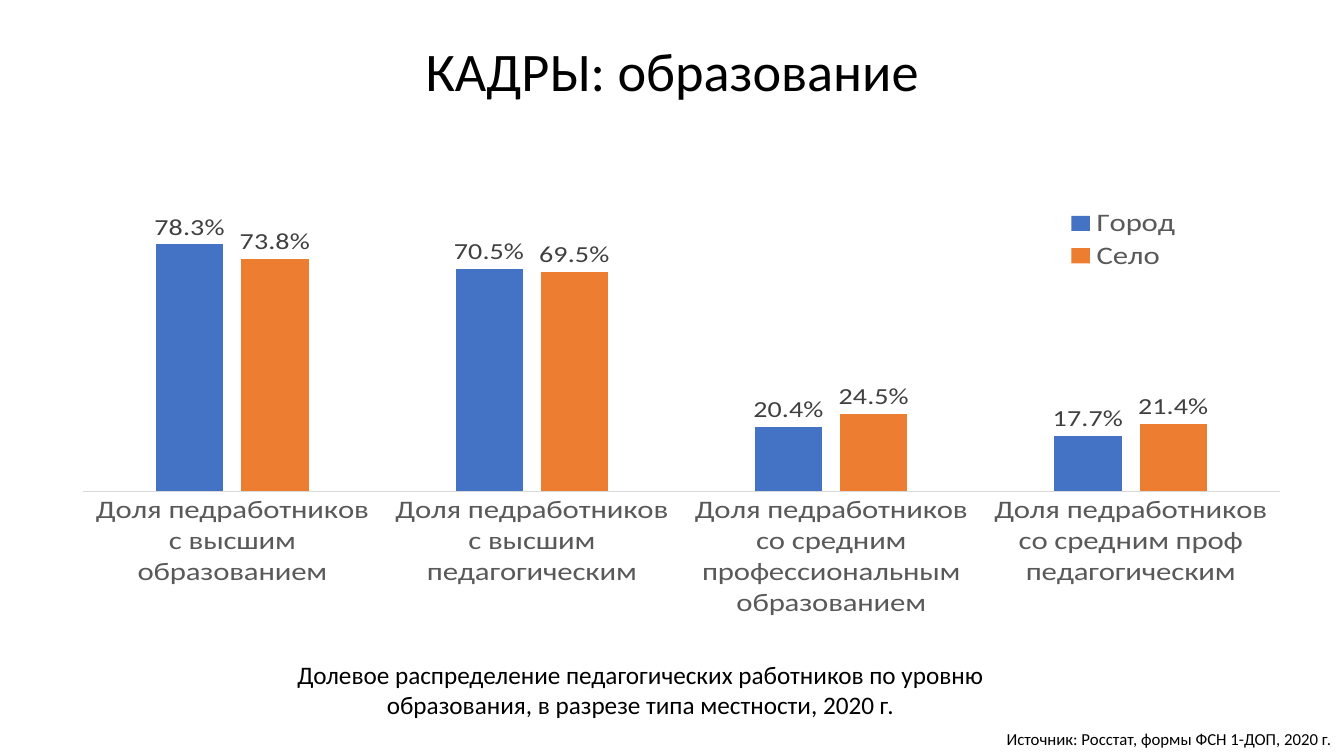
from lxml import etree
from pptx import Presentation, util as u
from pptx.chart.data import CategoryChartData
from pptx.dml.color import RGBColor
from pptx.enum import chart as ch, text
from pptx.oxml import ns

BLACK = RGBColor(0, 0, 0)
LABEL_GREY = RGBColor(0x40, 0x40, 0x40)
AXIS_GREY = RGBColor(0x59, 0x59, 0x59)
LINE_GREY = RGBColor(0xD9, 0xD9, 0xD9)
BLUE = RGBColor(0x44, 0x72, 0xC4)
ORANGE = RGBColor(0xED, 0x7D, 0x31)


def style_font(font, size, color, name):
    font.size = u.Pt(size)
    font.color.rgb = color
    font.name = name


def write_text(frame, words, size, font="Calibri", color=BLACK,
               align=text.PP_ALIGN.CENTER, spacing=None, before=None):
    frame.word_wrap = True
    paragraph = frame.paragraphs[0]
    paragraph.alignment = align
    paragraph.line_spacing = spacing
    paragraph.space_before = before
    run = paragraph.add_run()
    run.text = words
    style_font(run.font, size, color, font)


def place(element, before, **edges):
    layout = etree.Element(ns.qn("c:layout"))
    manual = etree.SubElement(layout, ns.qn("c:manualLayout"))
    for tag, value in edges.items():
        etree.SubElement(manual, ns.qn(f"c:{tag}")).set("val", str(value))
    for old in element.findall(ns.qn("c:layout")):
        element.remove(old)
    element.find(ns.qn(before)).addprevious(layout)


class SlideBuilder:
    font = "Calibri"

    def __init__(self, deck):
        self.slide = deck.slides.add_slide(deck.slide_layouts[6])

    def text_box(self, words, left, top, width, height, **style):
        box = self.slide.shapes.add_textbox(*map(u.Cm, (left, top, width, height)))
        write_text(box.text_frame, words, font=self.font, **style)

    def column_chart(self, categories, groups, left, top, width, height):
        data = CategoryChartData(number_format="0.0%")
        data.categories = categories
        for name, (values, _) in groups.items():
            data.add_series(name, values)
        chart = self.slide.shapes.add_chart(
            ch.XL_CHART_TYPE.COLUMN_CLUSTERED,
            *map(u.Cm, (left, top, width, height)), data).chart
        chart.has_title = False
        style_font(chart.font, 14, BLACK, self.font)
        self.style_axes(chart)
        self.style_columns(chart.plots[0], [color for _, color in groups.values()])
        self.add_legend(chart)
        place(chart.plots[0]._element.getparent(), "c:barChart",
              layoutTarget="inner", xMode="edge", yMode="edge",
              x=0.013, y=0.043, w=0.975, h=0.813)

    def style_axes(self, chart):
        level = chart.category_axis
        level.major_tick_mark = ch.XL_TICK_MARK.NONE
        level.format.line.color.rgb = LINE_GREY
        level.format.line.width = u.Pt(0.75)
        style_font(level.tick_labels.font, 22, AXIS_GREY, self.font)
        share = chart.value_axis
        share.minimum_scale, share.maximum_scale = 0, 0.9
        share.has_major_gridlines = False
        share.visible = False

    def style_columns(self, plot, colors):
        plot.gap_width, plot.overlap = 219, -27
        plot.vary_by_categories = False
        for series, color in zip(plot.series, colors):
            series.format.fill.solid()
            series.format.fill.fore_color.rgb = color
            labels = series.data_labels
            labels.show_value = True
            labels.position = ch.XL_LABEL_POSITION.OUTSIDE_END
            labels.number_format = "0.0%"
            labels.number_format_is_linked = False
            style_font(labels.font, 20, LABEL_GREY, self.font)

    def add_legend(self, chart):
        chart.has_legend = True
        legend = chart.legend
        legend.position = ch.XL_LEGEND_POSITION.TOP
        legend.include_in_layout = False
        style_font(legend.font, 22, AXIS_GREY, self.font)
        place(legend._element, "c:overlay", xMode="edge", yMode="edge",
              x=0.8, y=0.04, w=0.12, h=0.19)


def main():
    deck = Presentation()
    deck.slide_width, deck.slide_height = u.Cm(33.87), u.Cm(19.05)
    page = SlideBuilder(deck)
    page.text_box("КАДРЫ: образование", 2.33, 1.27, 29.21, 2.33,
                  size=38.8, spacing=0.7, before=u.Pt(10))
    page.column_chart(
        ["Доля педработников с высшим образованием",
         "Доля педработников с высшим педагогическим",
         "Доля педработников со средним профессиональным образованием",
         "Доля педработников со средним проф педагогическим"],
        {"Город": ((0.783, 0.705, 0.204, 0.177), BLUE),
         "Село": ((0.738, 0.695, 0.245, 0.214), ORANGE)},
        1.68, 4.85, 30.96, 10.74)
    page.text_box("Источник: Росстат, формы ФСН 1-ДОП, 2020 г.",
                  24.77, 18.24, 9.04, 0.76, size=12, align=text.PP_ALIGN.RIGHT)
    page.text_box("Долевое распределение педагогических работников по уровню "
                  "образования, в разрезе типа местности, 2020 г.",
                  7.01, 16.48, 18.26, 1.8, size=18)
    deck.save("out.pptx")


if __name__ == "__main__":
    main()
